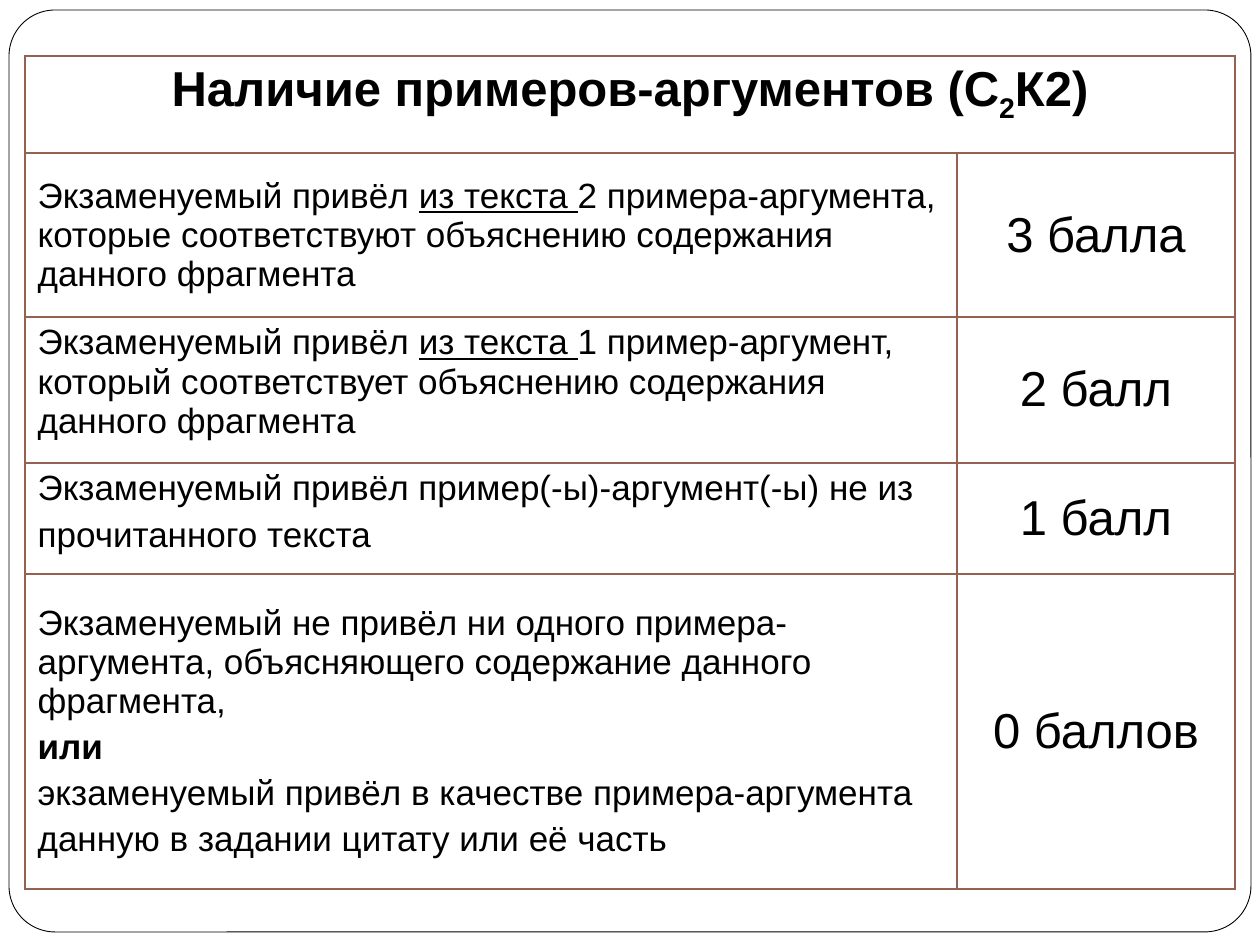
"""Build a slide with the marking table for example arguments."""
from dataclasses import dataclass

import lxml.etree
import pptx
import pptx.dml.color
import pptx.enum.shapes
import pptx.enum.text
import pptx.oxml.ns
import pptx.util

ALIGN = pptx.enum.text.PP_ALIGN
ANCHOR = pptx.enum.text.MSO_ANCHOR


@dataclass(frozen=True)
class Theme:
    font: str = "Arial"
    ink: str = "000000"
    paper: str = "FFFFFF"
    border: str = "956251"
    large: int = 28
    body: int = 20
    frame_line: float = 0.5
    border_line: int = 1
    paragraph_gap: float = 0.2


THEME = Theme()
PX = 914400 / 126
SLIDE_SIZE = (1260, 945)
FRAME = (9, 10, 1242, 922)
FRAME_ROUNDING = 0.05
TABLE_ORIGIN = (25, 56)
COLUMN_WIDTHS = (932, 278)
ROW_HEIGHTS = (97, 164, 146, 111, 315)

TITLE = [[("Наличие примеров-аргументов (С", "bold"), ("2", "bold subscript"), ("К2)", "bold")]]
CRITERIA = [
    (
        [[
            ("Экзаменуемый привёл ", ""),
            ("из текста ", "underline"),
            ("2 примера-аргумента, которые соответствуют объяснению содержания данного фрагмента", ""),
        ]],
        "3 балла",
        ANCHOR.MIDDLE,
    ),
    (
        [[
            ("Экзаменуемый привёл ", ""),
            ("из текста ", "underline"),
            ("1 пример-аргумент, который соответствует объяснению содержания данного фрагмента", ""),
        ]],
        "2 балл",
        ANCHOR.TOP,
    ),
    (
        [
            [("Экзаменуемый привёл пример(-ы)-аргумент(-ы) не из", "")],
            [("прочитанного текста", "")],
        ],
        "1 балл",
        ANCHOR.TOP,
    ),
    (
        [
            [("Экзаменуемый не привёл ни одного примера-аргумента, "
              "объясняющего содержание данного фрагмента,", "")],
            [("или", "bold")],
            [("экзаменуемый привёл в качестве примера-аргумента", "")],
            [("данную в задании цитату или её часть", "")],
        ],
        "0 баллов",
        ANCHOR.MIDDLE,
    ),
]


def px(length):
    return pptx.util.Emu(round(length * PX))


def rgb(value):
    return pptx.dml.color.RGBColor.from_string(value)


def write_text(cell, paragraphs, *, size, align=ALIGN.LEFT, anchor=ANCHOR.TOP):
    cell.vertical_anchor = anchor
    for index, runs in enumerate(paragraphs):
        frame = cell.text_frame
        paragraph = frame.add_paragraph() if index else frame.paragraphs[0]
        paragraph.alignment = align
        if index:
            paragraph.space_before = pptx.util.Pt(size * THEME.paragraph_gap)
        for text, style in runs:
            run = paragraph.add_run()
            run.text = text
            font = run.font
            font.name = THEME.font
            font.size = pptx.util.Pt(size)
            font.color.rgb = rgb(THEME.ink)
            font.bold = "bold" in style
            font.underline = "underline" in style
            if "subscript" in style:
                font._element.set("baseline", "-25000")


def style_cell(cell):
    cell.fill.solid()
    cell.fill.fore_color.rgb = rgb(THEME.paper)
    properties = cell._tc.get_or_add_tcPr()
    qn = pptx.oxml.ns.qn
    for index, side in enumerate(("a:lnL", "a:lnR", "a:lnT", "a:lnB")):
        line = lxml.etree.Element(qn(side), w=str(pptx.util.Pt(THEME.border_line)))
        fill = lxml.etree.SubElement(line, qn("a:solidFill"))
        lxml.etree.SubElement(fill, qn("a:srgbClr"), val=THEME.border)
        properties.insert(index, line)


def add_frame(slide):
    shape = slide.shapes.add_shape(
        pptx.enum.shapes.MSO_SHAPE.ROUNDED_RECTANGLE, *map(px, FRAME))
    shape.adjustments[0] = FRAME_ROUNDING
    shape.shadow.inherit = False
    shape.fill.solid()
    shape.fill.fore_color.rgb = rgb(THEME.paper)
    shape.line.color.rgb = rgb(THEME.ink)
    shape.line.width = pptx.util.Pt(THEME.frame_line)


def add_criteria_table(slide):
    table = slide.shapes.add_table(
        len(ROW_HEIGHTS), len(COLUMN_WIDTHS), *map(px, TABLE_ORIGIN),
        px(sum(COLUMN_WIDTHS)), px(sum(ROW_HEIGHTS))).table
    for column, width in zip(table.columns, COLUMN_WIDTHS):
        column.width = px(width)
    for row, height in zip(table.rows, ROW_HEIGHTS):
        row.height = px(height)
    for cell in table.iter_cells():
        style_cell(cell)
    table.cell(0, 0).merge(table.cell(0, 1))
    write_text(table.cell(0, 0), TITLE, size=THEME.large, align=ALIGN.CENTER)
    for row, (criterion, score, anchor) in enumerate(CRITERIA, start=1):
        write_text(table.cell(row, 0), criterion, size=THEME.body, anchor=anchor)
        write_text(table.cell(row, 1), [[(score, "")]], size=THEME.large,
                   align=ALIGN.CENTER, anchor=ANCHOR.MIDDLE)


def main():
    presentation = pptx.Presentation()
    presentation.slide_width, presentation.slide_height = map(px, SLIDE_SIZE)
    slide = presentation.slides.add_slide(presentation.slide_layouts[6])
    add_frame(slide)
    add_criteria_table(slide)
    presentation.save("out.pptx")


if __name__ == "__main__":
    main()
